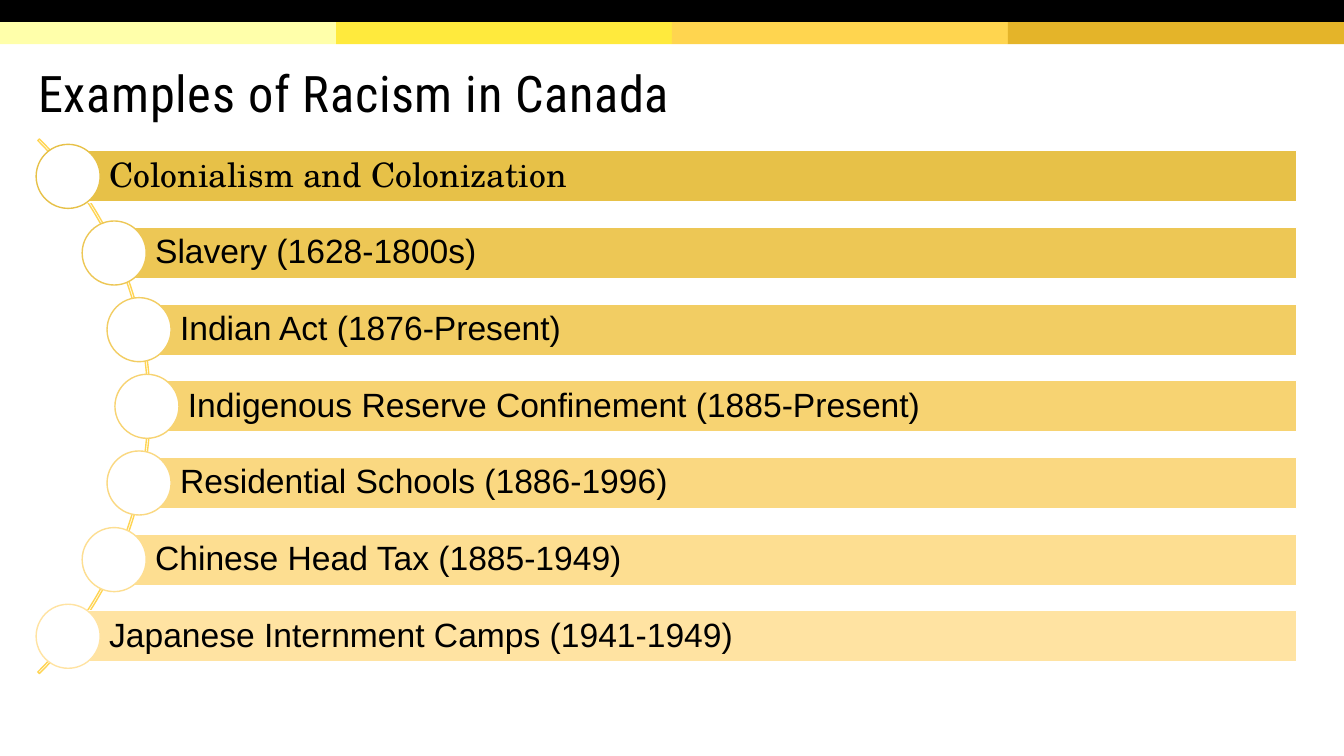
import math

from pptx import Presentation
from pptx.dml.color import RGBColor
from pptx.enum.shapes import MSO_SHAPE
from pptx.enum.text import MSO_ANCHOR, PP_ALIGN
from pptx.util import Emu, Pt

RECTANGLE = MSO_SHAPE.RECTANGLE
OVAL = MSO_SHAPE.OVAL
BLOCK_ARC = MSO_SHAPE.BLOCK_ARC
MIDDLE = MSO_ANCHOR.MIDDLE
LEFT = PP_ALIGN.LEFT

EMU_PER_PX = 9525
SLIDE_WIDTH, SLIDE_HEIGHT = 1280, 720

STRIPE_COLORS = ["FFFFAA", "FFEA3D", "FFD54F", "E4B429"]
EVENTS = [
    ("Colonialism and Colonization", "E7C148", "TeX Gyre Schola"),
    ("Slavery (1628-1800s)", "EDC755", "Arial"),
    ("Indian Act (1876-Present)", "F2CD63", "Arial"),
    ("Indigenous Reserve Confinement (1885-Present)", "F7D372", "Arial"),
    ("Residential Schools (1886-1996)", "FAD881", "Arial"),
    ("Chinese Head Tax (1885-1949)", "FDDE91", "Arial"),
    ("Japanese Internment Camps (1941-1949)", "FFE3A2", "Arial"),
]


def px(length):
    return Emu(round(length * EMU_PER_PX))


def color(hex_string):
    return RGBColor.from_string(hex_string)


def add_shape(slide, kind, left, top, width, height, fill=None, line=None):
    shape = slide.shapes.add_shape(kind, px(left), px(top), px(width), px(height))
    shape.shadow.inherit = False
    if fill:
        shape.fill.solid()
        shape.fill.fore_color.rgb = color(fill)
    else:
        shape.fill.background()
    if line:
        shape.line.color.rgb = color(line)
        shape.line.width = Pt(1)
    else:
        shape.line.fill.background()
    return shape


def write_text(shape, text, size, font_name, line_spacing):
    text_frame = shape.text_frame
    text_frame.text = text
    text_frame.word_wrap = True
    text_frame.vertical_anchor = MIDDLE
    paragraph = text_frame.paragraphs[0]
    paragraph.alignment = LEFT
    paragraph.line_spacing = line_spacing
    run = paragraph.runs[0]
    run.font.size = Pt(size)
    run.font.name = font_name
    run.font.color.rgb = color("000000")
    return run


def add_header(slide, left, top, width, height):
    band_height = height / 2
    stripe_width = width / len(STRIPE_COLORS)
    for index, fill in enumerate(STRIPE_COLORS):
        add_shape(slide, RECTANGLE, left + index * stripe_width, top + band_height,
                  stripe_width, band_height, fill)
    add_shape(slide, RECTANGLE, left, top, width, band_height, "000000")


def add_title(slide, left, top, width, height):
    title = slide.shapes.add_textbox(px(left), px(top), px(width), px(height))
    run = write_text(title, "Examples of Racism in Canada", 36, "Roboto Condensed", 0.85)
    run.font._element.set("spc", "50")


def add_event(slide, center_x, center_y, right, event):
    text, fill, font_name = event
    bar_height, diameter = 49, 61
    bar = add_shape(slide, RECTANGLE, center_x, center_y - bar_height / 2,
                    right - center_x, bar_height, fill, "FFFFFF")
    write_text(bar, text, 24, font_name, 0.9)
    text_frame = bar.text_frame
    text_frame.margin_left = px(39)
    text_frame.margin_top = text_frame.margin_right = text_frame.margin_bottom = px(7)
    add_shape(slide, OVAL, center_x - diameter / 2, center_y - diameter / 2,
              diameter, diameter, "FFFFFF", fill)


def add_timeline(slide, left, top, width, height):
    arc_size, radius, row_step = 720, 357, 73
    arc_center_x = left - 252
    arc_center_y = top + height / 2
    arc = add_shape(slide, BLOCK_ARC, arc_center_x - arc_size / 2,
                    arc_center_y - arc_size / 2, arc_size, arc_size, line="FFD554")
    for index, adjustment in enumerate([189, 27, 0.003]):
        arc.adjustments[index] = adjustment
    middle_row = (len(EVENTS) - 1) / 2
    for index, event in enumerate(EVENTS):
        offset = (index - middle_row) * row_step
        center_x = arc_center_x + math.sqrt(radius ** 2 - offset ** 2)
        add_event(slide, center_x, arc_center_y + offset, left + width, event)


def main():
    presentation = Presentation()
    presentation.slide_width = px(SLIDE_WIDTH)
    presentation.slide_height = px(SLIDE_HEIGHT)
    slide = presentation.slides.add_slide(presentation.slide_layouts[6])
    add_header(slide, 0, 0, SLIDE_WIDTH, 42)
    add_title(slide, 27, 45, 1214, 94)
    add_timeline(slide, 35, 132, 1200, 510)
    presentation.save("out.pptx")


if __name__ == "__main__":
    main()
